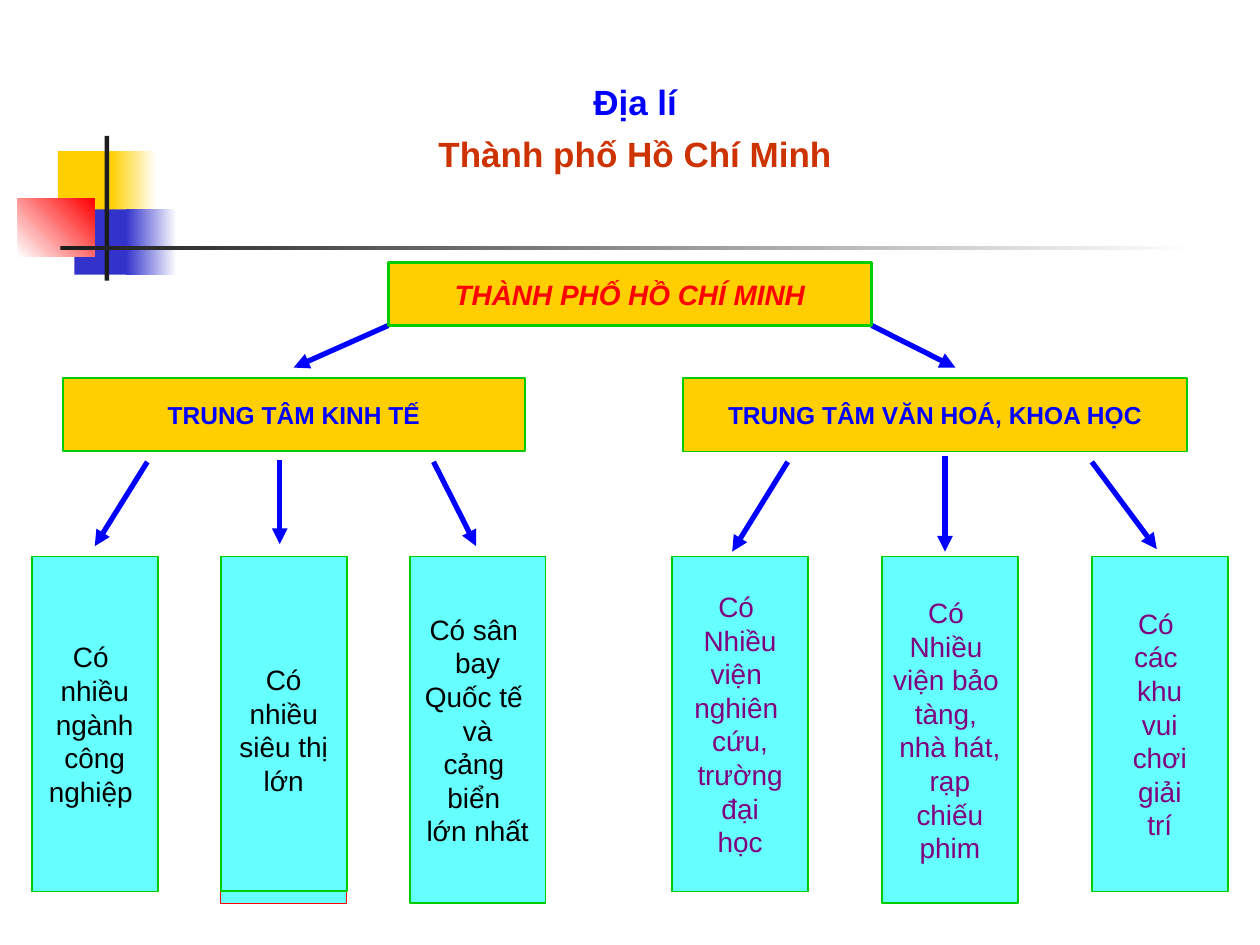
"""Build a concept-map slide on the roles of Ho Chi Minh City."""
from lxml import etree
from pptx import Presentation
from pptx import util as u
from pptx.dml.color import RGBColor
from pptx.enum import shapes, text
from pptx.oxml import ns

RECT = shapes.MSO_SHAPE.RECTANGLE
BUTTON = shapes.MSO_SHAPE.ACTION_BUTTON_CUSTOM
GOLD, CYAN, GREEN, BLUE = "FFCF01", "66FFFF", "00CC00", "0000FF"
color = RGBColor.from_string

deck = Presentation()
deck.slide_width, deck.slide_height = u.Cm(25.4), u.Cm(19.05)
slide = deck.slides.add_slide(deck.slide_layouts[5])


def block(kind, place, fills, border=None, weight=1):
    shape = slide.shapes.add_shape(kind, *map(u.Cm, place))
    shape.shadow.inherit = False
    if len(fills) == 2:
        shape.fill.gradient()
        for stop, shade in zip(shape.fill.gradient_stops, fills):
            stop.color.rgb = color(shade)
        shape.fill.gradient_angle = 0
    elif fills:
        shape.fill.solid()
        shape.fill.fore_color.rgb = color(fills[0])
    else:
        shape.fill.background()
    if border:
        shape.line.color.rgb = color(border)
        shape.line.width = u.Pt(weight)
    else:
        shape.line.fill.background()
    return shape


def write(shape, lines, size, ink, bold=False, italic=False, wrap=False):
    frame = shape.text_frame
    frame.word_wrap = wrap
    frame.auto_size = text.MSO_AUTO_SIZE.NONE
    frame.vertical_anchor = text.MSO_ANCHOR.MIDDLE
    for number, line in enumerate(lines):
        paragraph = frame.add_paragraph() if number else frame.paragraphs[0]
        paragraph.alignment = text.PP_ALIGN.CENTER
        for part_number, part in enumerate(line.split("\n")):
            if part_number:
                paragraph.add_line_break()
            run = paragraph.add_run()
            run.text = part
            run.font.name = "Arial"
            run.font.size = u.Pt(size)
            run.font.bold, run.font.italic = bold, italic
            run.font.color.rgb = color(ink)


block(RECT, (1.17, 3.05, 1.22, 1.32), [GOLD])
block(RECT, (2.24, 3.05, 0.91, 1.32), [GOLD, "FFFFFF"])
block(RECT, (1.5, 4.22, 1.17, 1.32), ["3333CC"])
block(RECT, (2.54, 4.22, 1.02, 1.32), ["3333CC", "FFFFFF"])
red_square = block(RECT, (0.36, 4.01, 1.55, 1.17), ["FFFFFF", "FF0000"])
red_square.fill.gradient_angle = 45
block(RECT, (2.11, 2.74, 0.09, 2.92), ["1C1C1C"])
block(RECT, (1.22, 4.95, 22.86, 0.09), ["1C1C1C", "FFFFFF"])

for left, width, weight, heading in [
    (1.27, 9.31, 1, "TRUNG TÂM KINH TẾ"),
    (13.77, 10.16, 0.75, "TRUNG TÂM VĂN HOÁ, KHOA HỌC"),
]:
    center = block(BUTTON, (left, 7.62, width, 1.48), [GOLD], GREEN, weight)
    write(center, [heading], 14, BLUE, bold=True)

SHORT, TALL = 6.75, 6.99
economy = [
    (2.54, SHORT, GREEN, ["Có ", "nhiều", "ngành", "công", "nghiệp "]),
    (2.54, TALL, "FF0000", ["Có", " nhiều ", "siêu thị", "lớn"]),
    (2.74, TALL, GREEN, ["Có sân ", "bay", "Quốc tế ", "và", "cảng ", "biển ", "lớn nhất"]),
]
culture = [
    (2.74, SHORT, GREEN, ["Có ", "Nhiều\nviện ", "nghiên ", "cứu,", "trường", "đại", "học"]),
    (2.74, TALL, GREEN, ["Có ", "Nhiều ", "viện bảo ", "tàng, ", "nhà hát,", "rạp", "chiếu", "phim"]),
    (2.74, SHORT, GREEN, ["Có ", "các ", "khu", "vui", "chơi", "giải", "trí"]),
]
for start, step, ink, features in [(0.64, 3.81, "000000", economy), (13.55, 4.23, "800080", culture)]:
    for column, (width, height, border, lines) in enumerate(features):
        weight = 1 if border == GREEN else 0.75
        feature = block(BUTTON, (start + step * column, 11.22, width, height), [CYAN], border, weight)
        write(feature, lines, 16, ink)

for ends in [
    (7.83, 6.56, 5.92, 7.41),
    (17.57, 6.56, 19.26, 7.41),
    (2.97, 9.31, 1.91, 11.01),
    (5.64, 9.27, 5.64, 10.97),
    (8.74, 9.31, 9.6, 11.01),
    (15.88, 9.31, 14.76, 11.12),
    (19.05, 9.2, 19.05, 11.12),
    (22.01, 9.31, 23.32, 11.07),
]:
    arrow = slide.shapes.add_connector(shapes.MSO_CONNECTOR.STRAIGHT, *map(u.Cm, ends))
    arrow.line.color.rgb = color(BLUE)
    arrow.line.width = u.Pt(3)
    etree.SubElement(arrow.line._get_or_add_ln(), ns.qn("a:tailEnd"), type="triangle")
    etree.SubElement(arrow._element.spPr, ns.qn("a:effectLst"))

block(RECT, (4.45, 11.22, 2.54, SHORT), [], GREEN)
city = block(BUTTON, (7.83, 5.29, 9.74, 1.27), [GOLD], GREEN, 1.5)
write(city, ["THÀNH PHỐ HỒ CHÍ MINH"], 16, "FF0000", bold=True, italic=True)

subject = slide.shapes.add_textbox(*map(u.Cm, (6.67, 1.48, 12.27, 1.12)))
write(subject, ["Địa lí"], 20, BLUE, bold=True, wrap=True)

title = slide.shapes.title
title.left, title.top, title.width, title.height = map(u.Cm, (6.14, 2.54, 13.33, 1.12))
write(title, ["Thành phố Hồ Chí Minh"], 20, "CC3300", bold=True, wrap=True)

deck.save("out.pptx")
